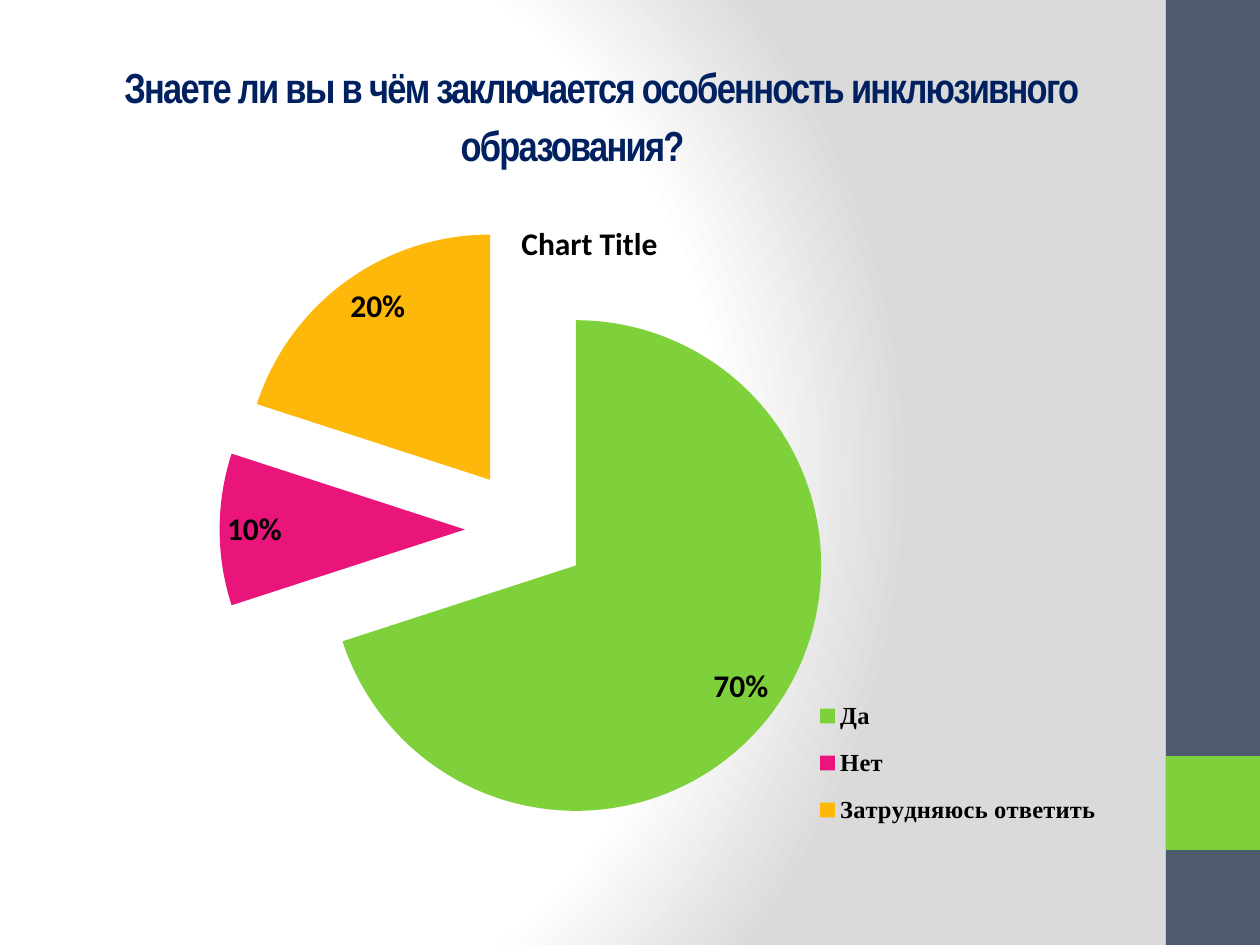
import lxml.etree
import pptx
import pptx.chart.data
import pptx.dml.color
import pptx.enum.chart
import pptx.enum.shapes
import pptx.enum.text
import pptx.oxml
import pptx.oxml.ns
import pptx.util

RGBColor = pptx.dml.color.RGBColor
SLATE = RGBColor(0x4E, 0x5B, 0x6F)
GREEN = RGBColor(0x7F, 0xD1, 0x3B)
PINK = RGBColor(0xEA, 0x15, 0x7A)
AMBER = RGBColor(0xFE, 0xB8, 0x0A)
NAVY = RGBColor(0x00, 0x20, 0x60)
BLACK = RGBColor(0x00, 0x00, 0x00)
WHITE = RGBColor(0xFF, 0xFF, 0xFF)
SILVER = RGBColor(0xDA, 0xDA, 0xDA)

PX_PER_INCH = 126
ANSWERS = [("Да", 0.7, GREEN), ("Нет", 0.1, PINK), ("Затрудняюсь ответить", 0.2, AMBER)]


def px(length):
    return pptx.util.Emu(round(length * 914400 / PX_PER_INCH))


def style_font(font, name, size, color, bold=True):
    font.name = name
    font.size = pptx.util.Pt(size)
    font.bold = bold
    font.color.rgb = color


def paint_background(page):
    page.background.fill.solid()
    properties = page.background.fill._xPr
    stops = "".join(
        f'<a:gs pos="{position * 1000}"><a:srgbClr val="{color}"/></a:gs>'
        for position, color in ((0, WHITE), (75, WHITE), (100, SILVER))
    )
    gradient = pptx.oxml.parse_xml(
        f'<a:gradFill {pptx.oxml.ns.nsdecls("a")} rotWithShape="1"><a:gsLst>{stops}</a:gsLst>'
        '<a:path path="circle"><a:fillToRect l="20000" t="50000" r="100000" b="50000"/></a:path>'
        "</a:gradFill>"
    )
    properties.replace(properties.find(pptx.oxml.ns.qn("a:solidFill")), gradient)


def add_sidebar(page, left, top, width, height):
    for offset, depth, color in ((0, height, SLATE), (756, width, GREEN)):
        bar = page.shapes.add_shape(
            pptx.enum.shapes.MSO_SHAPE.RECTANGLE,
            px(left), px(top + offset), px(width), px(depth),
        )
        bar.shadow.inherit = False
        bar.fill.solid()
        bar.fill.fore_color.rgb = color
        bar.line.fill.background()


def fill_title(page, left, top, width, height):
    box = page.shapes.title
    box.left, box.top, box.width, box.height = px(left), px(top), px(width), px(height)
    frame = box.text_frame
    frame.word_wrap = True
    frame.auto_size = pptx.enum.text.MSO_AUTO_SIZE.NONE
    frame.vertical_anchor = pptx.enum.text.MSO_ANCHOR.MIDDLE
    frame.margin_left = frame.margin_right = 0
    frame.margin_top = px(36)
    para = frame.paragraphs[0]
    para.alignment = pptx.enum.text.PP_ALIGN.CENTER
    para.line_spacing = pptx.util.Pt(33)
    para._p.get_or_add_pPr().set("indent", str(px(56)))
    span = para.add_run()
    span.text = "Знаете ли вы в чём заключается особенность инклюзивного образования?"
    style_font(span.font, "Arial Narrow", 24, NAVY)
    span.font._element.set("spc", "-100")


def make_layout(x, y, width, height, inner=False):
    target = '<c:layoutTarget val="inner"/>' if inner else ""
    return pptx.oxml.parse_xml(
        f'<c:layout {pptx.oxml.ns.nsdecls("c")}><c:manualLayout>{target}'
        '<c:xMode val="edge"/><c:yMode val="edge"/>'
        f'<c:x val="{x}"/><c:y val="{y}"/><c:w val="{width}"/><c:h val="{height}"/>'
        "</c:manualLayout></c:layout>"
    )


def place_part(part, layout):
    for old in part.findall(pptx.oxml.ns.qn("c:layout")):
        part.remove(old)
    position = part.find(pptx.oxml.ns.qn("c:legendPos"))
    if position is None:
        part.insert(0, layout)
    else:
        position.addnext(layout)


def add_answer_pie(page, left, top, width, height):
    data = pptx.chart.data.CategoryChartData(number_format="0%")
    data.categories = [answer for answer, share, color in ANSWERS]
    data.add_series("Series 1", [share for answer, share, color in ANSWERS])
    chart = page.shapes.add_chart(
        pptx.enum.chart.XL_CHART_TYPE.PIE, px(left), px(top), px(width), px(height), data
    ).chart
    style_font(chart.font, "Calibri", 10, BLACK, bold=False)

    chart.has_title = True
    heading = chart.chart_title.text_frame.paragraphs[0].add_run()
    heading.text = "Chart Title"
    style_font(heading.font, "Calibri", 18, BLACK)
    chart.chart_title.include_in_layout = False

    chart.has_legend = True
    chart.legend.position = pptx.enum.chart.XL_LEGEND_POSITION.RIGHT
    chart.legend.include_in_layout = False
    style_font(chart.legend.font, "Times New Roman", 14, BLACK)
    place_part(chart.legend._element, make_layout(0.71, 0.7, 0.28, 0.23))

    plot = chart.plots[0]
    plot.vary_by_categories = True
    place_part(plot._element.getparent(), make_layout(0.07, 0.04, 0.74, 0.88, inner=True))
    series = plot.series[0]
    for index, (answer, share, color) in enumerate(ANSWERS):
        fill = series.points[index].format.fill
        fill.solid()
        fill.fore_color.rgb = color
    explosion = lxml.etree.Element(pptx.oxml.ns.qn("c:explosion"), val="25")
    series._element.find(pptx.oxml.ns.qn("c:dPt")).addprevious(explosion)

    labels = series.data_labels
    labels.show_value = True
    labels.show_percentage = False
    labels.number_format = "0%"
    labels.number_format_is_linked = False
    labels.position = pptx.enum.chart.XL_LABEL_POSITION.INSIDE_END
    style_font(labels.font, "Calibri", 18, BLACK)


def main():
    deck = pptx.Presentation()
    deck.slide_width, deck.slide_height = px(1260), px(945)
    page = deck.slides.add_slide(deck.slide_layouts.get_by_name("Title Only"))
    paint_background(page)
    add_sidebar(page, 1166, 0, 94, 945)
    fill_title(page, 54, 0, 1037, 195)
    add_answer_pie(page, 63, 195, 1053, 697)
    deck.save("out.pptx")


if __name__ == "__main__":
    main()
